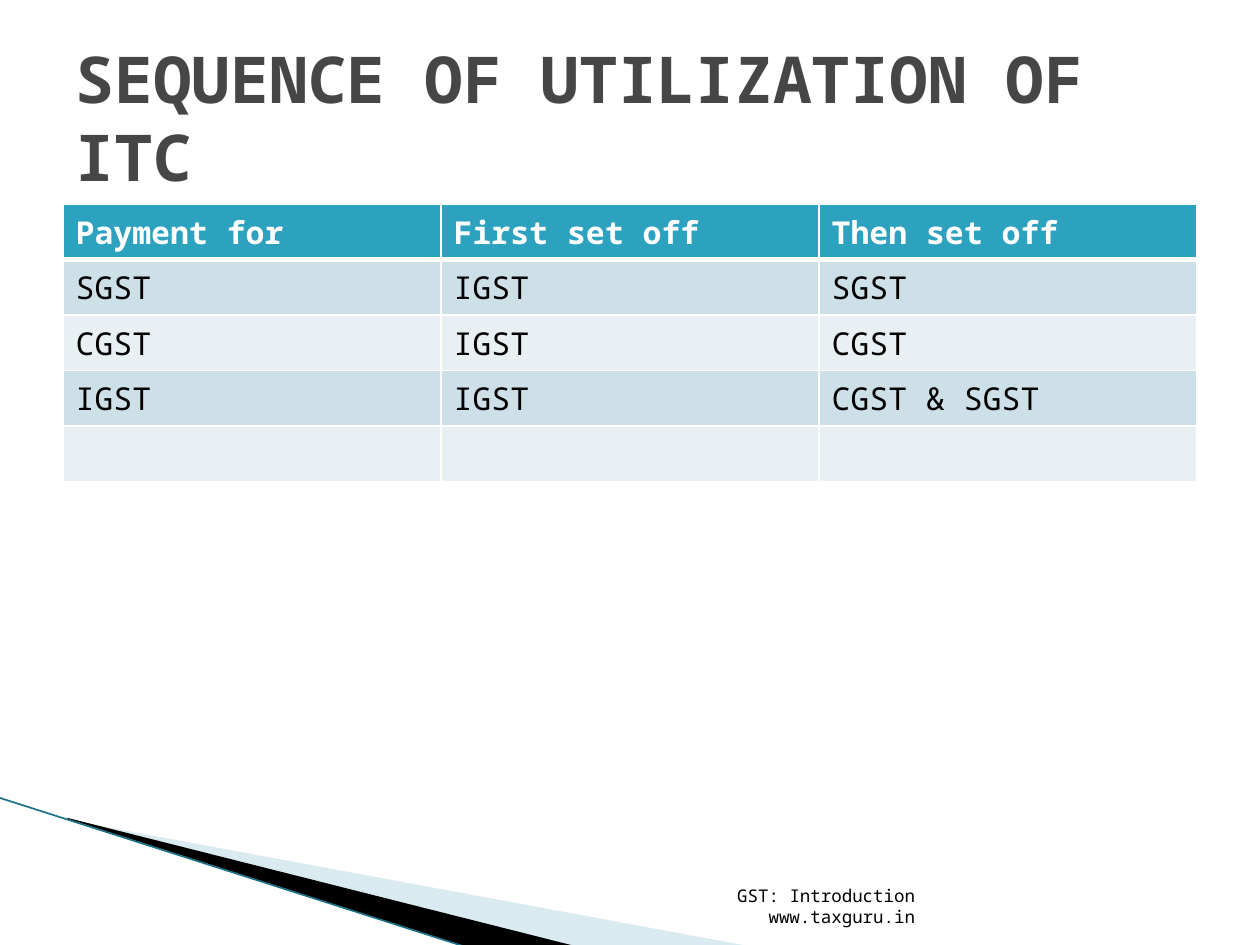
from lxml import etree
from pptx import Presentation
from pptx.dml.color import RGBColor
from pptx.enum.shapes import MSO_CONNECTOR
from pptx.enum.text import MSO_ANCHOR, PP_ALIGN
from pptx.oxml.ns import qn
from pptx.util import Inches, Pt

STRAIGHT = MSO_CONNECTOR.STRAIGHT
MIDDLE, BOTTOM = MSO_ANCHOR.MIDDLE, MSO_ANCHOR.BOTTOM
LEFT, RIGHT = PP_ALIGN.LEFT, PP_ALIGN.RIGHT
TITLE_ONLY = 5


def color(value):
    return RGBColor.from_string(value)


def style_paragraph(paragraph, size, hex_color, bold=False, align=LEFT):
    paragraph.alignment = align
    font = paragraph.font
    font.name = "Noto Sans Mono"
    font.size = Pt(size)
    font.bold = bold
    font.color.rgb = color(hex_color)


presentation = Presentation()
presentation.slide_width = Inches(10)
presentation.slide_height = Inches(7.5)
slide = presentation.slides.add_slide(presentation.slide_layouts[TITLE_ONLY])

# Corner wedges: points, fill, opacity in percent
wedges = [
    ([(0.55, 6.51), (5.95, 7.51), (4.56, 7.51), (0.55, 6.5)], "A0CBDC", 40),
    ([(0.53, 6.49), (4.57, 7.51), (3.72, 7.52), (0.54, 6.5)], "000000", 100),
]
for points, fill, opacity in wedges:
    corners = [(Inches(x), Inches(y)) for x, y in points]
    builder = slide.shapes.build_freeform(*corners[0])
    builder.add_line_segments(corners[1:], close=True)
    wedge = builder.convert_to_shape()
    wedge.shadow.inherit = False
    wedge.line.fill.background()
    wedge.fill.solid()
    wedge.fill.fore_color.rgb = color(fill)
    if opacity < 100:
        fill_color = wedge.fill._xPr.find(".//" + qn("a:srgbClr"))
        etree.SubElement(fill_color, qn("a:alpha"), val=str(opacity * 1000))

# Line along the wedges
edge = slide.shapes.add_connector(
    STRAIGHT, Inches(-0.01), Inches(6.33), Inches(3.71), Inches(7.52))
edge.line.color.rgb = color("1B7186")
edge.line.width = Pt(0.95)
etree.SubElement(edge._element.spPr, qn("a:effectLst"))

# Set-off table
rows = [
    ("Payment for", "First set off", "Then set off"),
    ("SGST", "IGST", "SGST"),
    ("CGST", "IGST", "CGST"),
    ("IGST", "IGST", "CGST & SGST"),
    ("", "", ""),
]
table = slide.shapes.add_table(
    len(rows), 3, Inches(0.5), Inches(1.62), Inches(9), Inches(2.03)).table
for row_index, texts in enumerate(rows):
    header = row_index == 0
    band = "CDE0E8" if row_index % 2 else "E8F0F4"
    for column_index, text in enumerate(texts):
        cell = table.cell(row_index, column_index)
        cell.text = text
        style_paragraph(cell.text_frame.paragraphs[0], 18,
                        "FFFFFF" if header else "000000", bold=header)
        # Borders come before the fill in the cell properties
        properties = cell._tc.get_or_add_tcPr()
        for side in ("L", "R", "T", "B"):
            thick = (header and side == "B") or (row_index == 1 and side == "T")
            border = etree.SubElement(properties, qn("a:ln" + side),
                                      w=str(Pt(3 if thick else 1)))
            border_fill = etree.SubElement(border, qn("a:solidFill"))
            etree.SubElement(border_fill, qn("a:srgbClr"), val="FFFFFF")
        cell.fill.solid()
        cell.fill.fore_color.rgb = color("2DA2BF" if header else band)

# Footer
footer = slide.shapes.add_textbox(
    Inches(4.79), Inches(7.01), Inches(2.57), Inches(0.4)).text_frame
footer.word_wrap = True
footer.vertical_anchor = BOTTOM
footer.text = "GST: Introduction www.taxguru.in"
style_paragraph(footer.paragraphs[0], 10, "000000", align=RIGHT)

# Title
title = slide.shapes.title
title.left, title.top = Inches(0.5), Inches(0.3)
title.width, title.height = Inches(9), Inches(1.25)
title.text_frame.text = "SEQUENCE OF UTILIZATION OF ITC"
title.text_frame.word_wrap = True
title.text_frame.vertical_anchor = MIDDLE
style_paragraph(title.text_frame.paragraphs[0], 36.9, "464646", bold=True)

presentation.save("out.pptx")
